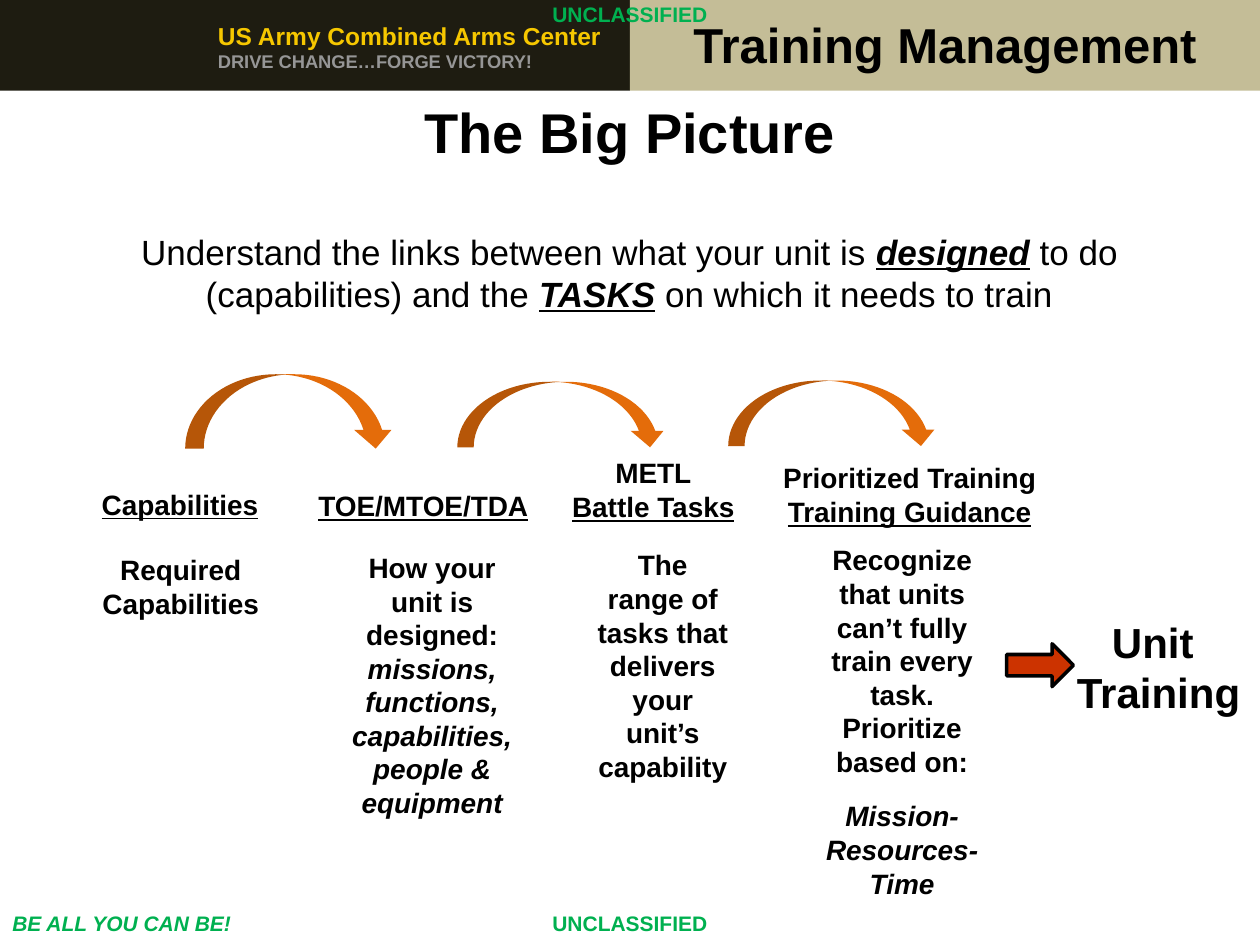
from pptx import Presentation
from pptx.dml.color import RGBColor
from pptx.enum.shapes import MSO_SHAPE
from pptx.enum.text import MSO_ANCHOR, MSO_AUTO_SIZE, PP_ALIGN
from pptx.util import Inches, Pt

BLACK = RGBColor(0x00, 0x00, 0x00)
WHITE = RGBColor(0xFF, 0xFF, 0xFF)
DARK = RGBColor(0x1E, 0x1C, 0x11)
TAN = RGBColor(0xC4, 0xBD, 0x97)
GREEN = RGBColor(0x00, 0xB0, 0x50)
GOLD = RGBColor(0xF6, 0xC7, 0x00)
GRAY = RGBColor(0x96, 0x96, 0x96)
ORANGE = RGBColor(0xE4, 0x6C, 0x0A)
RED = RGBColor(0xCC, 0x33, 0x00)


def place(shape, left, top, width, height):
    shape.left, shape.top = Inches(left), Inches(top)
    shape.width, shape.height = Inches(width), Inches(height)


def add_span(para, text, size, color, style):
    """Add a run; style holds any of the letters b, i and u."""
    span = para.add_run()
    span.text = text
    font = span.font
    font.name, font.size, font.color.rgb = "Arial", Pt(size), color
    font.bold, font.italic, font.underline = (letter in style for letter in "biu")


def write(box, lines, size=16, color=BLACK, style="b", align=PP_ALIGN.CENTER,
          anchor=MSO_ANCHOR.TOP, wrap=True, grow=True):
    """Fill a box; each line is a text or a list of (text, style) spans."""
    frame = box.text_frame
    frame.word_wrap = wrap
    frame.auto_size = MSO_AUTO_SIZE.SHAPE_TO_FIT_TEXT if grow else MSO_AUTO_SIZE.NONE
    frame.vertical_anchor = anchor
    for index, line in enumerate(lines):
        para = frame.add_paragraph() if index else frame.paragraphs[0]
        para.alignment = align
        spans = [(line, style)] if isinstance(line, str) else line
        for text, span_style in spans:
            add_span(para, text, size, color, span_style)
    return frame


def add_text(page, at, lines, **formatting):
    box = page.shapes.add_textbox(*map(Inches, at))
    return write(box, lines, **formatting)


def add_block(page, preset, at, fill, outline=None):
    shape = page.shapes.add_shape(preset, *map(Inches, at))
    shape.shadow.inherit = False
    shape.fill.solid()
    shape.fill.fore_color.rgb = fill
    if outline is None:
        shape.line.fill.background()
    else:
        shape.line.color.rgb = outline
        shape.line.width = Pt(2)


def set_insets(frame, side, edge):
    frame.margin_left = frame.margin_right = Inches(side)
    frame.margin_top = frame.margin_bottom = Inches(edge)


def add_banner(page):
    for left, fill in ((0, DARK), (5, TAN)):
        add_block(page, MSO_SHAPE.RECTANGLE, (left, 0, 5, 0.72), fill)

    center = add_text(page, (1.13, 0.02, 3.77, 0.7), ["US Army Combined Arms Center"],
                      size=14, color=GOLD, align=PP_ALIGN.LEFT,
                      anchor=MSO_ANCHOR.MIDDLE, wrap=False, grow=False)
    add_span(center.add_paragraph(), "DRIVE CHANGE…FORGE VICTORY!", 10.5, GRAY, "b")
    set_insets(center, 0.04, 0.02)
    for para in center.paragraphs:
        properties = para._p.get_or_add_pPr()
        properties.set("marL", str(Inches(0.35)))
        properties.set("indent", str(Inches(0.21)))

    topic = add_text(page, (5, 0, 5, 0.7), ["Training Management"], size=28,
                     anchor=MSO_ANCHOR.MIDDLE, grow=False)
    set_insets(topic, 0.02, 0.02)


def add_markings(page):
    add_text(page, (0, 7.18, 2.34, 0.3), ["BE ALL YOU CAN BE!"], size=12,
             color=GREEN, style="bi", align=PP_ALIGN.LEFT)
    for top in (0.01, 7.23):
        add_text(page, (4.25, top, 1.5, 0.2), ["UNCLASSIFIED"], size=12,
                 color=GREEN, anchor=MSO_ANCHOR.MIDDLE, grow=False)


def add_stage(page, heading_at, heading, body_at, body):
    """Add a heading, its last line underlined, and the text below it."""
    lines = [*heading[:-1], [(heading[-1], "bu")]]
    add_text(page, heading_at, lines, wrap=False)
    return add_text(page, body_at, body)


def main():
    deck = Presentation()
    deck.slide_width, deck.slide_height = Inches(10), Inches(7.5)
    page = deck.slides.add_slide(deck.slide_layouts[5])
    page.background.fill.solid()
    page.background.fill.fore_color.rgb = WHITE

    add_banner(page)
    add_markings(page)

    title = page.shapes.title
    place(title, 0, 0.72, 10, 0.64)
    write(title, ["The Big Picture"], size=32, anchor=MSO_ANCHOR.MIDDLE)

    add_text(page, (0.92, 1.78, 8.15, 0.77), [[
        ("Understand the links between what your unit is ", ""),
        ("designed", "biu"),
        (" to do (capabilities) and the ", ""),
        ("TASKS", "biu"),
        (" on which it needs to train", ""),
    ]], size=20)

    for left, top, height in ((1.47, 2.97, 0.59), (3.63, 3.03, 0.52), (5.78, 3.02, 0.52)):
        add_block(page, MSO_SHAPE.CURVED_DOWN_ARROW, (left, top, 1.66, height), ORANGE)

    add_stage(page, (0.7, 3.82, 1.46, 0.37), ["Capabilities"],
              (0.65, 4.34, 1.57, 0.64), ["Required Capabilities"])
    add_stage(page, (2.42, 3.83, 1.88, 0.37), ["TOE/MTOE/TDA"],
              (2.65, 4.32, 1.56, 2.26),
              ["How your unit is designed:",
               [("missions, functions, capabilities, people & equipment", "bi")]])
    add_stage(page, (4.43, 3.57, 1.51, 0.64), ["METL", "Battle Tasks"],
              (4.64, 4.3, 1.24, 1.99),
              ["The range of tasks that delivers your unit’s capability"])
    priorities = add_stage(
        page, (6.1, 3.61, 2.24, 0.64), ["Prioritized Training", "Training Guidance"],
        (6.38, 4.26, 1.56, 3.06),
        ["Recognize that units can’t fully train every task. Prioritize based on:",
         [("Mission-Resources-Time", "bi")]])
    priorities.paragraphs[1].space_before = Pt(12)

    add_block(page, MSO_SHAPE.RIGHT_ARROW, (7.99, 5.11, 0.53, 0.34), RED, outline=BLACK)
    add_text(page, (8.44, 4.84, 1.51, 0.91), ["Unit ", "Training"], size=24, wrap=False)

    deck.save("out.pptx")


if __name__ == "__main__":
    main()
